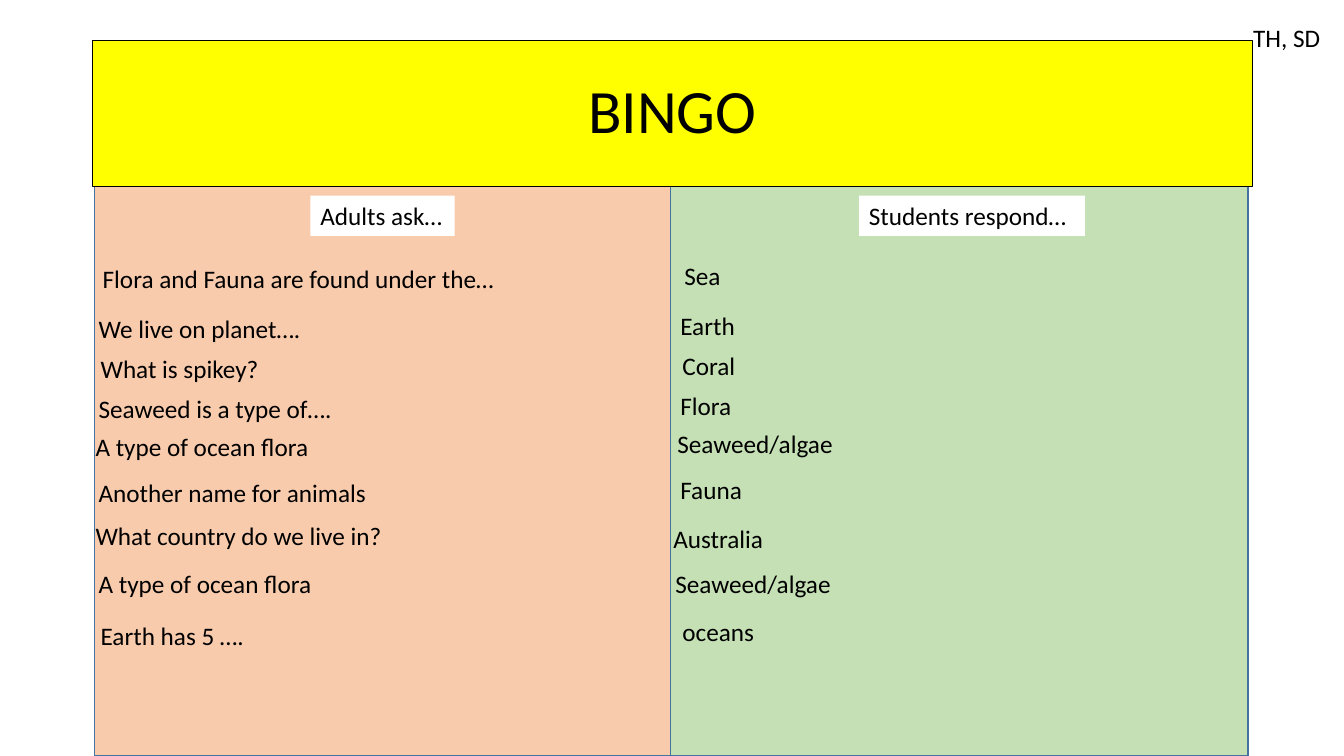
from pptx import Presentation
from pptx import util as u
from pptx.dml.color import RGBColor
from pptx.enum import shapes, text

SLIDE_WIDTH, SLIDE_HEIGHT = 13.33, 7.5
COLUMN_WIDTH, COLUMN_HEIGHT, COLUMN_TOP = 5.73, 5.65, 1.85
LINE_HEIGHT = 0.4

# Each line: text, left and top offsets from its column
QUESTIONS = [
    ("Flora and Fauna are found under the…", -0.02, 0.71),
    ("We live on planet….", -0.06, 1.21),
    ("What is spikey?", -0.04, 1.61),
    ("Seaweed is a type of….", -0.06, 2.0),
    ("A type of ocean flora", -0.09, 2.38),
    ("Another name for animals", -0.06, 2.84),
    ("What country do we live in?", -0.09, 3.26),
    ("A type of ocean flora", -0.06, 3.74),
    ("Earth has 5 ….", -0.04, 4.25),
]
ANSWERS = [
    ("Sea", 0.04, 0.68),
    ("Earth", 0, 1.18),
    ("Coral", 0.02, 1.58),
    ("Flora", 0, 1.97),
    ("Seaweed/algae", -0.03, 2.35),
    ("Fauna", 0, 2.81),
    ("Australia", -0.07, 3.29),
    ("Seaweed/algae", -0.05, 3.74),
    ("oceans", 0.02, 4.22),
]


def color(value):
    return RGBColor.from_string(value)


def add_panel(slide, box, fill, line, line_width):
    shape = slide.shapes.add_shape(
        shapes.MSO_SHAPE.RECTANGLE, *(u.Inches(length) for length in box))
    shape.shadow.inherit = False
    shape.fill.solid()
    shape.fill.fore_color.rgb = color(fill)
    shape.line.color.rgb = color(line)
    shape.line.width = u.Pt(line_width)
    return shape


def set_text(shape, words, size=18):
    paragraph = shape.text_frame.paragraphs[0]
    paragraph.text = words
    paragraph.font.size = u.Pt(size)
    paragraph.font.name = "Calibri"
    paragraph.font.color.rgb = color("000000")
    return paragraph


def add_text(slide, box, words, wrap=True):
    shape = slide.shapes.add_textbox(*(u.Inches(length) for length in box))
    shape.text_frame.word_wrap = wrap
    shape.text_frame.auto_size = text.MSO_AUTO_SIZE.SHAPE_TO_FIT_TEXT
    set_text(shape, words)
    return shape


def add_title(slide, box, words):
    shape = add_panel(slide, box, "FFFF00", "000000", 0.75)
    shape.text_frame.vertical_anchor = text.MSO_ANCHOR.MIDDLE
    paragraph = set_text(shape, words, 44)
    paragraph.alignment = text.PP_ALIGN.CENTER
    paragraph.line_spacing = 0.9


def add_column(slide, box, fill, heading, heading_offset, heading_width, lines):
    left, top, width, _ = box
    add_panel(slide, box, fill, "43739E", 1)
    # White heading label
    label = add_text(
        slide, (left + heading_offset, top + 0.09, heading_width, LINE_HEIGHT),
        heading, wrap=False)
    label.fill.solid()
    label.fill.fore_color.rgb = color("FFFFFF")
    # Lines of the game
    for words, across, down in lines:
        add_text(slide, (left + across, top + down, width, LINE_HEIGHT), words)


def main():
    presentation = Presentation()
    presentation.slide_width = u.Inches(SLIDE_WIDTH)
    presentation.slide_height = u.Inches(SLIDE_HEIGHT)
    slide = presentation.slides.add_slide(presentation.slide_layouts[6])

    # Question and answer columns
    size = COLUMN_WIDTH, COLUMN_HEIGHT
    add_column(slide, (0.94, COLUMN_TOP, *size), "F8CBAD",
               "Adults ask…", 2.14, 1.43, QUESTIONS)
    add_column(slide, (6.65, COLUMN_TOP, *size), "C5E0B4",
               "Students respond…", 1.87, 2.24, ANSWERS)

    # Title banner and initials
    add_title(slide, (0.92, 0.4, 11.5, 1.45), "BINGO")
    add_text(slide, (12.33, 0.17, 1.05, LINE_HEIGHT), "TH, SD")

    presentation.save("out.pptx")


if __name__ == "__main__":
    main()
